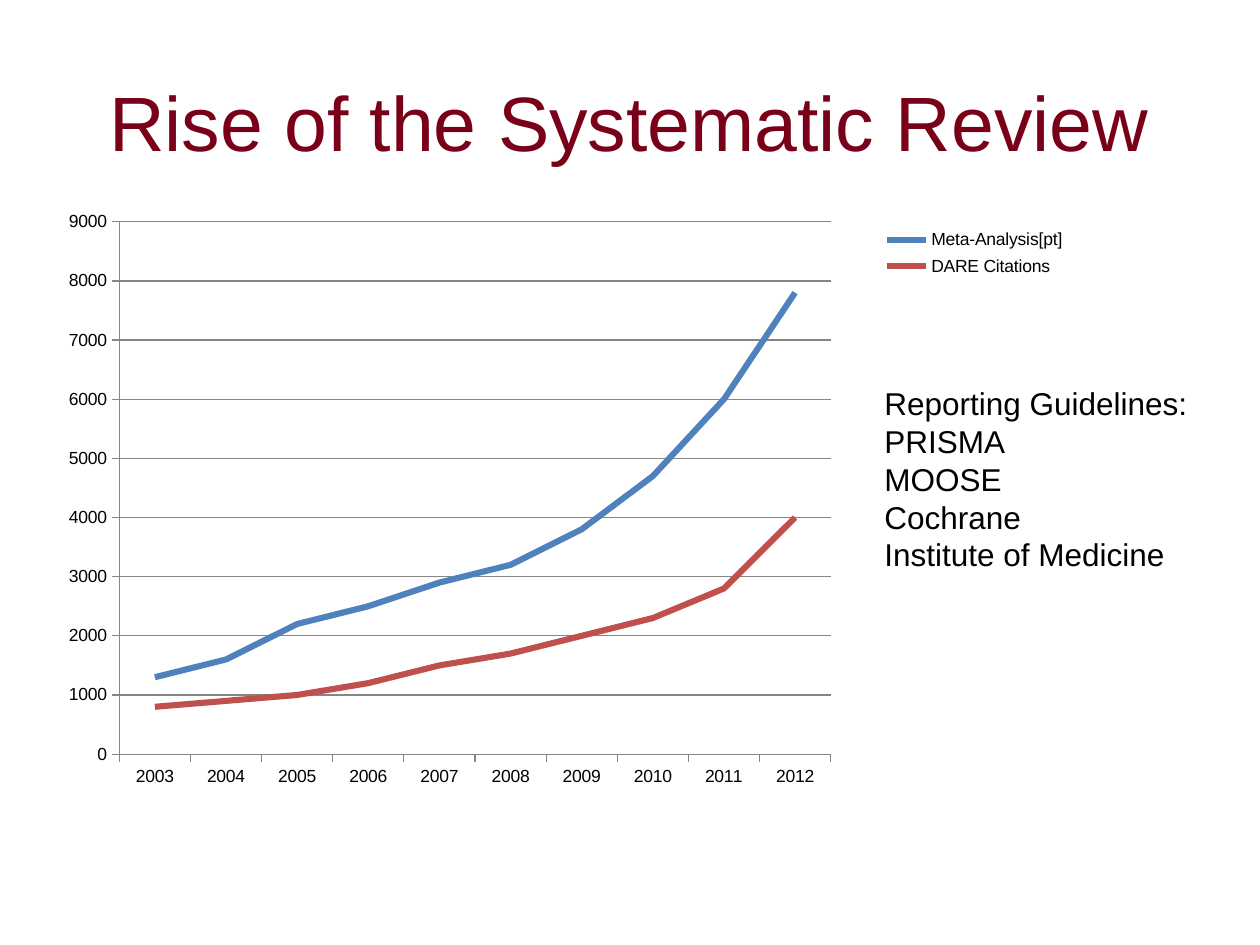
from dataclasses import dataclass

from lxml import etree
from pptx import Presentation
from pptx import util as u
from pptx.chart.data import CategoryChartData
from pptx.dml.color import RGBColor
from pptx.enum import chart as charts, text
from pptx.oxml.ns import qn

PX_PER_INCH = 126


@dataclass(frozen=True)
class Theme:
    font: str = "Arial"
    title_color: str = "7A0019"
    ink: str = "000000"
    axis: str = "868686"
    series: tuple = ("4F81BD", "C0504D")
    title_size: int = 44
    body_size: int = 18
    chart_size: int = 10
    axis_width: float = 0.75
    series_width: float = 3.5


def px(length):
    return u.Emu(round(length * u.Inches(1) / PX_PER_INCH))


def format_font(font, name, size, color):
    font.name = name
    font.size = u.Pt(size)
    font.color.rgb = RGBColor.from_string(color)


def write_text(frame, lines, *, name, size, color, align, anchor):
    frame.word_wrap = True
    frame.vertical_anchor = anchor
    for index, line in enumerate(lines):
        paragraph = frame.add_paragraph() if index else frame.paragraphs[0]
        paragraph.alignment = align
        run = paragraph.add_run()
        run.text = line
        format_font(run.font, name, size, color)


def format_line(line, color, width):
    line.color.rgb = RGBColor.from_string(color)
    line.width = u.Pt(width)


def set_layout(element, position, **values):
    """Fix the place of a chart part, as fractions of the chart."""
    for old in element.findall(qn("c:layout")):
        element.remove(old)
    layout = etree.Element(qn("c:layout"))
    manual = etree.SubElement(layout, qn("c:manualLayout"))
    for tag, value in values.items():
        etree.SubElement(manual, qn(f"c:{tag}")).set("val", str(value))
    element.insert(position, layout)


class SlideBuilder:
    def __init__(self, presentation, theme):
        self.theme = theme
        self.slide = presentation.slides.add_slide(presentation.slide_layouts[5])

    def title(self, line, left, top, width, height):
        shape = self.slide.shapes.title
        shape.left, shape.top = px(left), px(top)
        shape.width, shape.height = px(width), px(height)
        write_text(shape.text_frame, [line], name=self.theme.font,
                   size=self.theme.title_size, color=self.theme.title_color,
                   align=text.PP_ALIGN.CENTER, anchor=text.MSO_ANCHOR.MIDDLE)

    def text_box(self, lines, left, top, width, height):
        shape = self.slide.shapes.add_textbox(px(left), px(top), px(width), px(height))
        write_text(shape.text_frame, lines, name=self.theme.font,
                   size=self.theme.body_size, color=self.theme.ink,
                   align=text.PP_ALIGN.LEFT, anchor=text.MSO_ANCHOR.TOP)
        shape.text_frame.auto_size = text.MSO_AUTO_SIZE.SHAPE_TO_FIT_TEXT

    def line_chart(self, categories, series, left, top, width, height):
        theme = self.theme
        data = CategoryChartData(number_format="General")
        data.categories = categories
        for name, values in series.items():
            data.add_series(name, values)
        chart = self.slide.shapes.add_chart(
            charts.XL_CHART_TYPE.LINE, px(left), px(top), px(width), px(height), data).chart
        chart.has_title = False
        format_font(chart.font, theme.font, theme.chart_size, theme.ink)

        # Series
        plot = chart.plots[0]
        plot.vary_by_categories = False
        for line, color in zip(plot.series, theme.series):
            line.smooth = False
            format_line(line.format.line, color, theme.series_width)

        # Axes
        for axis in (chart.category_axis, chart.value_axis):
            axis.major_tick_mark = charts.XL_TICK_MARK.OUTSIDE
            axis.minor_tick_mark = charts.XL_TICK_MARK.NONE
            format_line(axis.format.line, theme.axis, theme.axis_width)
        value_axis = chart.value_axis
        value_axis.minimum_scale, value_axis.maximum_scale = 0, 9000
        value_axis.major_unit = 1000
        value_axis.has_major_gridlines = True
        format_line(value_axis.major_gridlines.format.line, theme.axis, theme.axis_width)

        # Legend and plot placement
        chart.has_legend = True
        chart.legend.position = charts.XL_LEGEND_POSITION.RIGHT
        chart.legend.include_in_layout = False
        plot_area = chart.plots[0]._element.getparent()
        set_layout(plot_area, 0, layoutTarget="inner", xMode="edge", yMode="edge",
                   x=0.059, y=0.038, w=0.633, h=0.889)
        set_layout(chart.legend._element, 1, xMode="edge", yMode="edge",
                   x=0.73, y=0.04, w=0.18, h=0.1)


def main():
    presentation = Presentation()
    presentation.slide_width, presentation.slide_height = px(1260), px(945)
    builder = SlideBuilder(presentation, Theme())

    # Title
    builder.title("Rise of the Systematic Review", 94, 42, 1071, 157)

    # Publications per year
    builder.line_chart(
        range(2003, 2013),
        {
            "Meta-Analysis[pt]": (1300, 1600, 2200, 2500, 2900, 3200, 3800, 4700, 6000, 7800),
            "DARE Citations": (800, 900, 1000, 1200, 1500, 1700, 2000, 2300, 2800, 4000),
        },
        53, 199, 1124, 599)

    # Guidelines
    builder.text_box(
        ["Reporting Guidelines:", "PRISMA", "MOOSE", "Cochrane", "Institute of Medicine"],
        872, 378, 357, 204)

    presentation.save("out.pptx")


if __name__ == "__main__":
    main()
